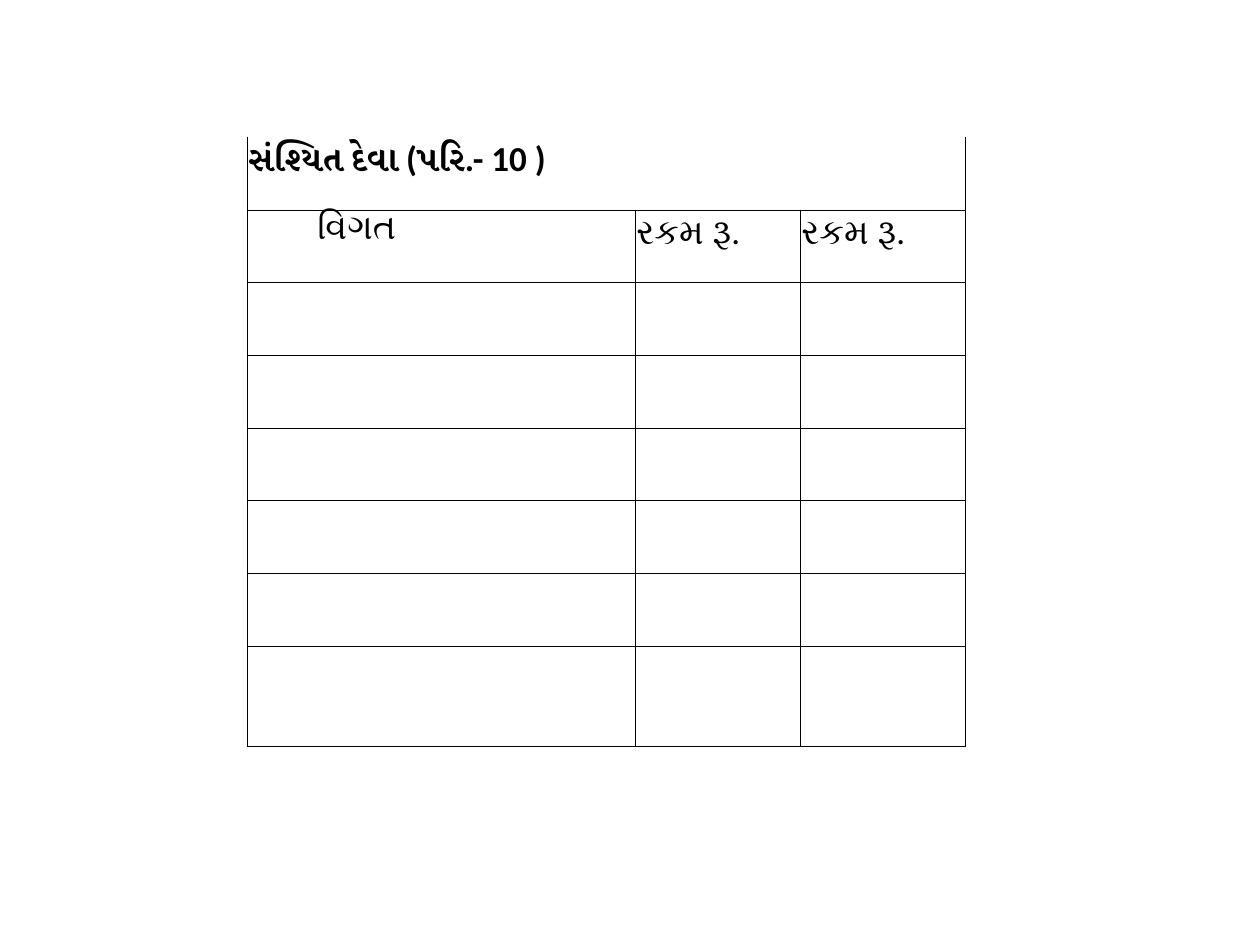
import pptx
import pptx.dml.color
import pptx.oxml
import pptx.oxml.ns
import pptx.util
from pptx.util import Inches


def color(value):
    return pptx.dml.color.RGBColor.from_string(value)


def add_borders(cell, sides, rgb="000000", width=0.5):
    """Draw the given cell sides (from L, R, T, B, in that order)."""
    tcPr = cell._tc.get_or_add_tcPr()
    for i, side in enumerate(sides):
        ln = pptx.oxml.parse_xml(
            f'<a:ln{side} {pptx.oxml.ns.nsdecls("a")} w="{pptx.util.Pt(width)}">'
            f'<a:solidFill><a:srgbClr val="{rgb}"/></a:solidFill></a:ln{side}>'
        )
        tcPr.insert(i, ln)


prs = pptx.Presentation()
prs.slide_width, prs.slide_height = Inches(10), Inches(7.5)
s = prs.slides.add_slide(prs.slide_layouts[6])

table_height, last_row = 4.84, 0.8
col_widths = [3.08, 1.31, 1.31]
row_heights = [(table_height - last_row) / 7] * 7 + [last_row]
texts = {
    (0, 0): "સંશ્યિત દેવા (પરિ.- 10 )",
    (1, 0): "વિગત",
    (1, 1): "રકમ રૂ.",
    (1, 2): "રકમ રૂ.",
}
margins = {
    "margin_left": Inches(0.01),
    "margin_right": Inches(0.01),
    "margin_top": Inches(0.01),
    "margin_bottom": Inches(0),
}
font_format = {"name": "Calibri", "size": pptx.util.Pt(20)}

table = s.shapes.add_table(
    len(row_heights), len(col_widths), Inches(1.96), Inches(1.09),
    Inches(sum(col_widths)), Inches(table_height),
).table
table.first_row = table.horz_banding = False
for column, width in zip(table.columns, col_widths):
    column.width = Inches(width)
for row, height in zip(table.rows, row_heights):
    row.height = Inches(height)
table.cell(0, 0).merge(table.cell(0, 2))

for r in range(len(row_heights)):
    for c in range(len(col_widths)):
        cell = table.cell(r, c)
        cell.fill.background()
        add_borders(cell, "LRB" if r == 0 else "LRTB")
        for name, value in margins.items():
            setattr(cell, name, value)
        if (r, c) in texts:
            p = cell.text_frame.paragraphs[0]
            run = p.add_run()
            run.text = texts[r, c]
            for name, value in font_format.items():
                setattr(run.font, name, value)
            run.font.bold = r == 0
            run.font.color.rgb = color("000000")

# Gujarati is a complex script: the bold title needs its font named for it too.
title = table.cell(0, 0).text_frame.paragraphs[0].runs[0]
rPr = title._r.get_or_add_rPr()
rPr.set("lang", "gu-IN")
rPr.append(pptx.oxml.parse_xml(
    f'<a:cs {pptx.oxml.ns.nsdecls("a")} typeface="{font_format["name"]}"/>'
))

# The description heading is set in from the cell's left edge.
p = table.cell(1, 0).text_frame.paragraphs[0]
p._p.get_or_add_pPr().set("marL", str(Inches(0.55)))

prs.save("out.pptx")
